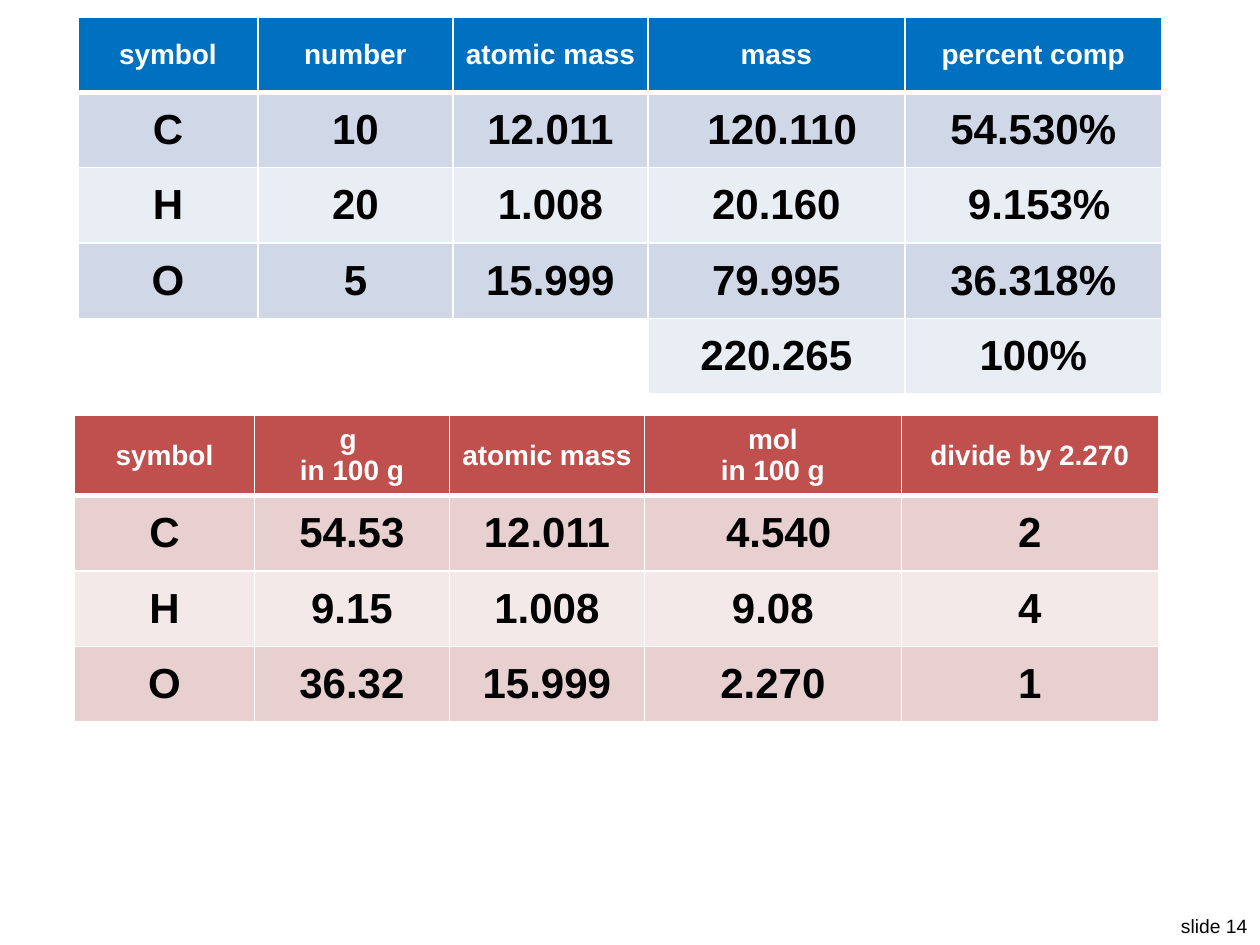
from dataclasses import dataclass

from lxml import etree
from pptx import Presentation
from pptx.dml.color import RGBColor
from pptx.enum.text import MSO_ANCHOR, PP_ALIGN
from pptx.oxml.ns import qn
from pptx.util import Cm, Pt

MIDDLE = MSO_ANCHOR.MIDDLE
CENTER = PP_ALIGN.CENTER
RIGHT = PP_ALIGN.RIGHT


@dataclass(frozen=True)
class Theme:
    font: str = "Arial"
    white: str = "FFFFFF"
    black: str = "000000"
    blue: tuple[str, str, str] = ("0070C0", "D0D8E8", "E9EDF4")
    red: tuple[str, str, str] = ("C0504D", "E8D0D0", "F4E9E9")
    header_size: int = 16
    body_size: int = 24
    footer_size: int = 11
    thin_line: int = 1
    thick_line: int = 3


@dataclass(frozen=True)
class Composition:
    left: float
    top: float
    header_height: float
    colors: tuple[str, str, str]
    rows: list[list[str]]


THEME = Theme()
COLUMN_WIDTHS = (3.63, 3.93, 3.93, 5.18, 5.18)
ROW_HEIGHT = 1.52

COMPOSITIONS = [
    Composition(1.57, 0.34, ROW_HEIGHT, THEME.blue, [
        ["symbol", "number", "atomic mass", "mass", "percent comp"],
        ["C", "10", "12.011", " 120.110", "54.530%"],
        ["H", "20", "1.008", "20.160", " 9.153%"],
        ["O", "5", "15.999", "79.995", "36.318%"],
        ["", "", "", "220.265", "100%"],
    ]),
    Composition(1.5, 8.38, 1.59, THEME.red, [
        ["symbol", "g \nin 100 g", "atomic mass", "mol\nin 100 g", "divide by 2.270"],
        ["C", "54.53", "12.011", " 4.540", "2"],
        ["H", "9.15", "1.008", "9.08", "4"],
        ["O", "36.32", "15.999", "2.270", "1"],
    ]),
]


def write(frame, text: str, size: int, color: str, alignment, bold: bool) -> None:
    for index, line in enumerate(text.split("\n")):
        paragraph = frame.add_paragraph() if index else frame.paragraphs[0]
        paragraph.alignment = alignment
        run = paragraph.add_run()
        run.text = line
        run.font.name = THEME.font
        run.font.size = Pt(size)
        run.font.bold = bold
        run.font.color.rgb = RGBColor.from_string(color)


def draw_borders(cell, top: int, bottom: int) -> None:
    properties = cell._tc.get_or_add_tcPr()
    widths = {"L": THEME.thin_line, "R": THEME.thin_line, "T": top, "B": bottom}
    for position, (side, width) in enumerate(widths.items()):
        border = etree.Element(qn(f"a:ln{side}"), w=str(Pt(width)))
        fill = etree.SubElement(border, qn("a:solidFill"))
        etree.SubElement(fill, qn("a:srgbClr"), val=THEME.white)
        properties.insert(position, border)


def draw_composition(slide, composition: Composition) -> None:
    rows = composition.rows
    heights = [composition.header_height] + [ROW_HEIGHT] * (len(rows) - 1)
    table = slide.shapes.add_table(
        len(rows), len(COLUMN_WIDTHS), Cm(composition.left), Cm(composition.top),
        Cm(sum(COLUMN_WIDTHS)), Cm(sum(heights))).table
    for column, width in zip(table.columns, COLUMN_WIDTHS):
        column.width = Cm(width)

    header_fill, *bands = composition.colors
    for row_index, (values, height) in enumerate(zip(rows, heights)):
        table.rows[row_index].height = Cm(height)
        is_header = row_index == 0
        fill = header_fill if is_header else bands[(row_index - 1) % 2]
        size = THEME.header_size if is_header else THEME.body_size
        color = THEME.white if is_header else THEME.black
        top = THEME.thick_line if row_index == 1 else THEME.thin_line
        bottom = THEME.thick_line if is_header else THEME.thin_line
        for column_index, value in enumerate(values):
            cell = table.cell(row_index, column_index)
            cell.vertical_anchor = MIDDLE
            if value:
                cell.fill.solid()
                cell.fill.fore_color.rgb = RGBColor.from_string(fill)
                write(cell.text_frame, value, size, color, CENTER, True)
            else:
                cell.fill.background()
            draw_borders(cell, top, bottom)


def draw_footer(slide) -> None:
    footer = slide.shapes.add_textbox(Cm(23.5), Cm(18.31), Cm(1.9), Cm(0.74))
    frame = footer.text_frame
    frame.word_wrap = False
    write(frame, "slide 14", THEME.footer_size, THEME.black, RIGHT, False)


def main() -> None:
    presentation = Presentation()
    presentation.slide_width = Cm(25.4)
    presentation.slide_height = Cm(19.05)
    slide = presentation.slides.add_slide(presentation.slide_layouts[6])
    draw_footer(slide)
    for composition in COMPOSITIONS:
        draw_composition(slide, composition)
    presentation.save("out.pptx")


if __name__ == "__main__":
    main()
